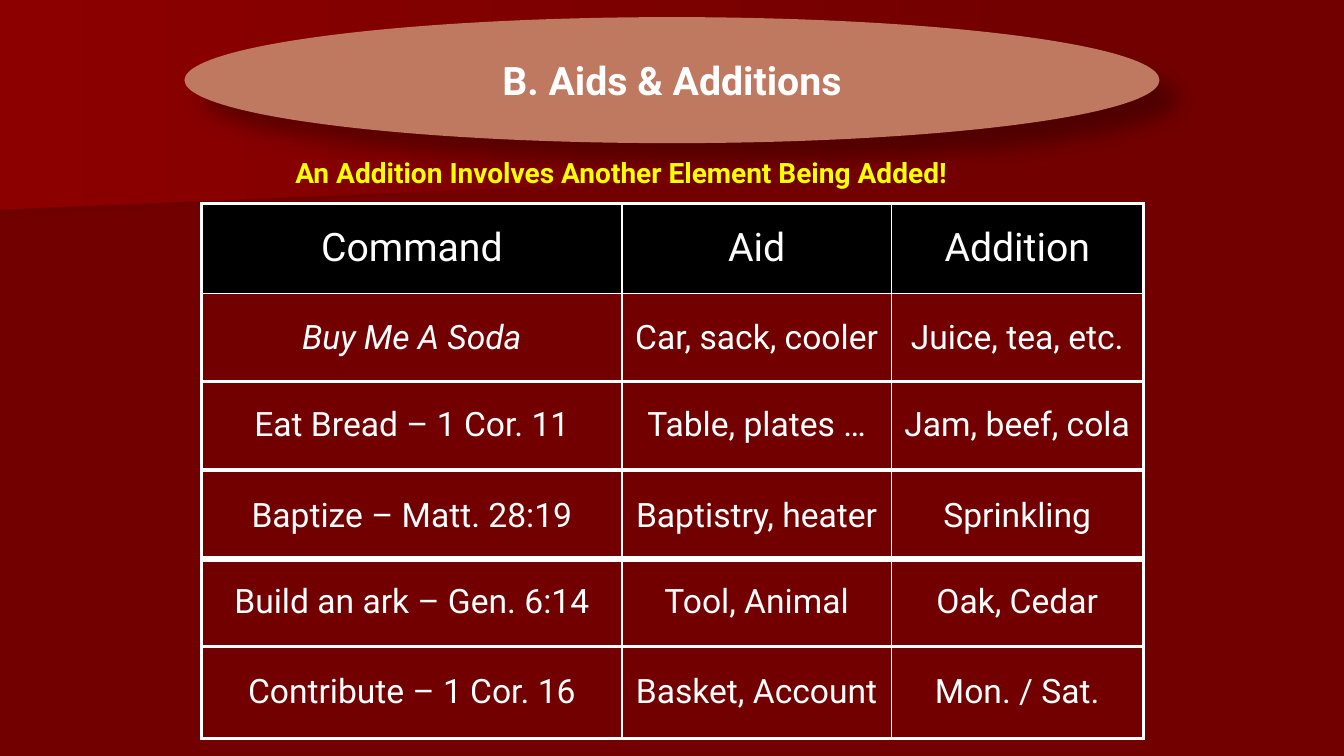
import pptx
import pptx.util
import pptx.dml.color
import pptx.enum.shapes
import pptx.enum.text
import pptx.oxml.ns
import lxml.etree

Inches = pptx.util.Inches
Pt = pptx.util.Pt
RGB = pptx.dml.color.RGBColor.from_string
qn = pptx.oxml.ns.qn
Align = pptx.enum.text.PP_ALIGN
Anchor = pptx.enum.text.MSO_ANCHOR

TITLE = "B. Aids & Additions"
CLAIM = "An Addition Involves Another Element Being Added!"
HEAD = ("Command", "Aid", "Addition")
TABLES = [
    (2.02, (0.89, 0.88), [HEAD, ("Buy Me A Soda", "Car, sack, cooler", "Juice, tea, etc.")]),
    (3.78, (0.88,), [("Eat Bread – 1 Cor. 11", "Table, plates …", "Jam, beef, cola")]),
    (4.67, (0.89,), [("Baptize – Matt. 28:19", "Baptistry, heater", "Sprinkling")]),
    (5.53, (0.89,), [("Build an ark – Gen. 6:14", "Tool, Animal", "Oak, Cedar")]),
    (6.41, (0.92,), [("Contribute – 1 Cor. 16", "Basket, Account", "Mon. / Sat.")]),
]
LEFT = 2
COLS = (4.17, 2.67, 2.5)
BANDS = [
    ("low", [(10.37, 1.53), (0, 2.17), (0, 1.01), (10.39, 1.01), (10.37, 1.28)]),
    ("high", [(10.56, 1.62), (0, 2.08), (0, 0), (10.56, 0)]),
]
THEME = {
    "font": "Roboto",
    "back": "720000", "low": "6F0000", "high": "8C0000",
    "oval": "BE7960", "shade": "000000", "head": "000000",
    "text": "FFFFFF", "claim": "FFFF00", "rule": "FFFFFF",
    "big": 28, "mid": 24, "small": 20,
    "thick": 2.25, "thin": 1,
}


def style(para, size, color, bold=False, slant=False):
    font = para.font
    font.name = THEME["font"]
    font.size = Pt(THEME[size])
    font.color.rgb = RGB(THEME[color])
    font.bold = bold
    font.italic = slant


def add_band(slide, tint, points):
    start, *rest = [(Inches(x), Inches(y)) for x, y in points]
    form = slide.shapes.build_freeform(*start, scale=1.0)
    form.add_line_segments(rest, close=True)
    band = form.convert_to_shape()
    band.shadow.inherit = False
    band.line.fill.background()
    band.fill.gradient()
    band.fill.gradient_angle = 0
    for stop, color in zip(band.fill.gradient_stops, (tint, "back")):
        stop.color.rgb = RGB(THEME[color])


def add_shade(shape):
    shape.shadow.inherit = False
    effects = shape._element.spPr.find(qn("a:effectLst"))
    outer = lxml.etree.SubElement(
        effects, qn("a:outerShdw"), blurRad=str(Pt(15)), dist=str(Pt(18)),
        dir=str(45 * 60000), algn="ctr", rotWithShape="0")
    color = lxml.etree.SubElement(outer, qn("a:srgbClr"), val=THEME["shade"])
    lxml.etree.SubElement(color, qn("a:alpha"), val="30000")


def add_title(slide):
    oval = slide.shapes.add_shape(
        pptx.enum.shapes.MSO_SHAPE.OVAL,
        Inches(1.83), Inches(0.17), Inches(9.67), Inches(1.25))
    oval.fill.solid()
    oval.fill.fore_color.rgb = RGB(THEME["oval"])
    oval.line.fill.background()
    add_shade(oval)
    frame = oval.text_frame
    frame.word_wrap = False
    frame.vertical_anchor = Anchor.MIDDLE
    para = frame.paragraphs[0]
    para.text = TITLE
    para.alignment = Align.CENTER
    style(para, "big", "text", bold=True)


def add_claim(slide):
    box = slide.shapes.add_textbox(Inches(2.83), Inches(1.49), Inches(7.45), Inches(0.43))
    frame = box.text_frame
    frame.word_wrap = False
    frame.auto_size = pptx.enum.text.MSO_AUTO_SIZE.SHAPE_TO_FIT_TEXT
    para = frame.paragraphs[0]
    para.text = CLAIM
    style(para, "small", "claim", bold=True)


def add_rules(cell, widths):
    props = cell._tc.get_or_add_tcPr()
    for side, width in zip("LRTB", widths):
        line = lxml.etree.SubElement(props, qn("a:ln" + side), w=str(Pt(THEME[width])))
        fill = lxml.etree.SubElement(line, qn("a:solidFill"))
        lxml.etree.SubElement(fill, qn("a:srgbClr"), val=THEME["rule"])


def fill_cell(cell, text, is_head, slant):
    cell.vertical_anchor = Anchor.MIDDLE
    if is_head:
        cell.fill.solid()
        cell.fill.fore_color.rgb = RGB(THEME["head"])
    else:
        cell.fill.background()
    para = cell.text_frame.paragraphs[0]
    para.text = text
    para.alignment = Align.CENTER
    gap = lxml.etree.SubElement(para._p.get_or_add_pPr(), qn("a:spcBef"))
    lxml.etree.SubElement(gap, qn("a:spcPct"), val="20000")
    style(para, "big" if is_head else "mid", "text", slant=slant)


def add_grid(slide, top, heights, rows):
    grid = slide.shapes.add_table(
        len(rows), len(COLS), Inches(LEFT), Inches(top),
        Inches(sum(COLS)), Inches(sum(heights))).table
    grid.first_row = False
    grid.horz_banding = False
    for col, width in zip(grid.columns, COLS):
        col.width = Inches(width)
    for r, (height, row) in enumerate(zip(heights, rows)):
        grid.rows[r].height = Inches(height)
        for c, text in enumerate(row):
            outer = (c == 0, c == len(COLS) - 1, r == 0, r == len(rows) - 1)
            cell = grid.cell(r, c)
            add_rules(cell, ["thick" if edge else "thin" for edge in outer])
            slant = c == 0 and r == 1
            fill_cell(cell, text, row is HEAD, slant)


def main():
    deck = pptx.Presentation()
    deck.slide_width = Inches(13.33)
    deck.slide_height = Inches(7.5)
    slide = deck.slides.add_slide(deck.slide_layouts[6])
    slide.background.fill.solid()
    slide.background.fill.fore_color.rgb = RGB(THEME["back"])
    for tint, points in BANDS:
        add_band(slide, tint, points)
    add_title(slide)
    add_claim(slide)
    for top, heights, rows in TABLES:
        add_grid(slide, top, heights, rows)
    deck.save("out.pptx")


if __name__ == "__main__":
    main()
